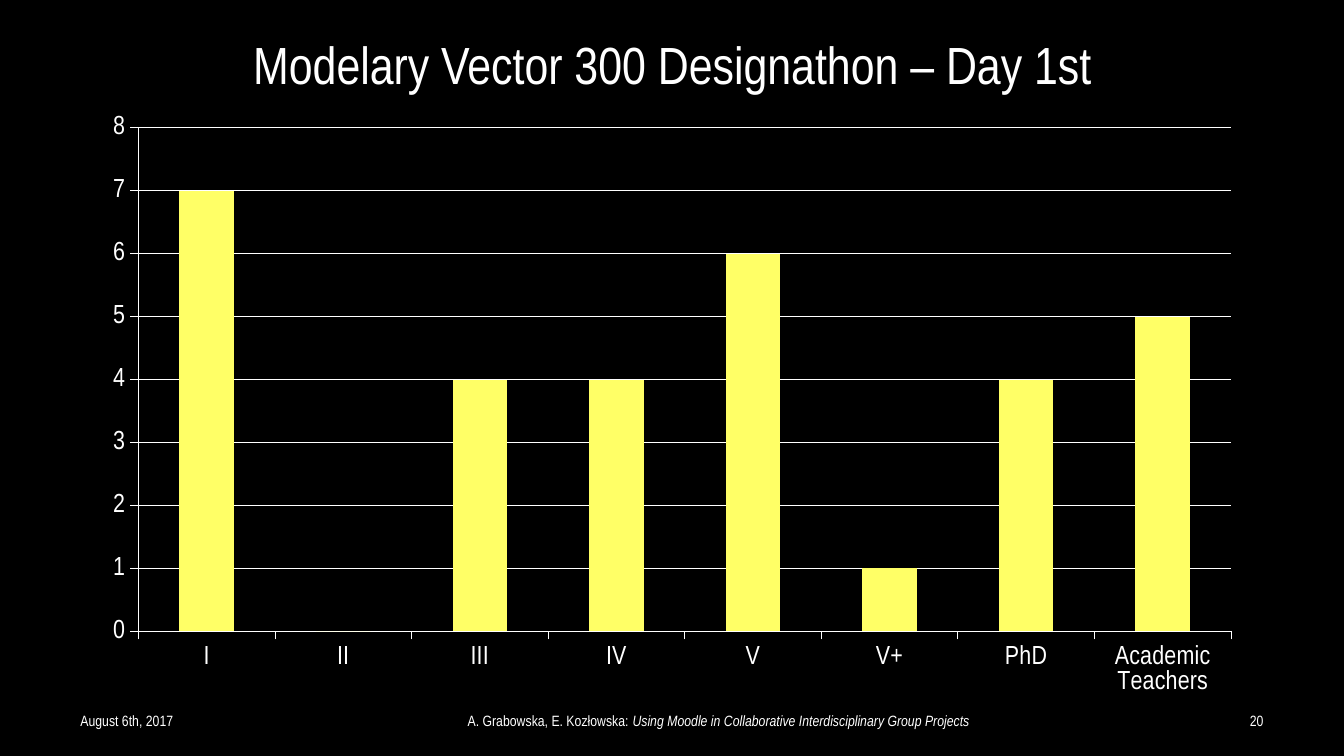
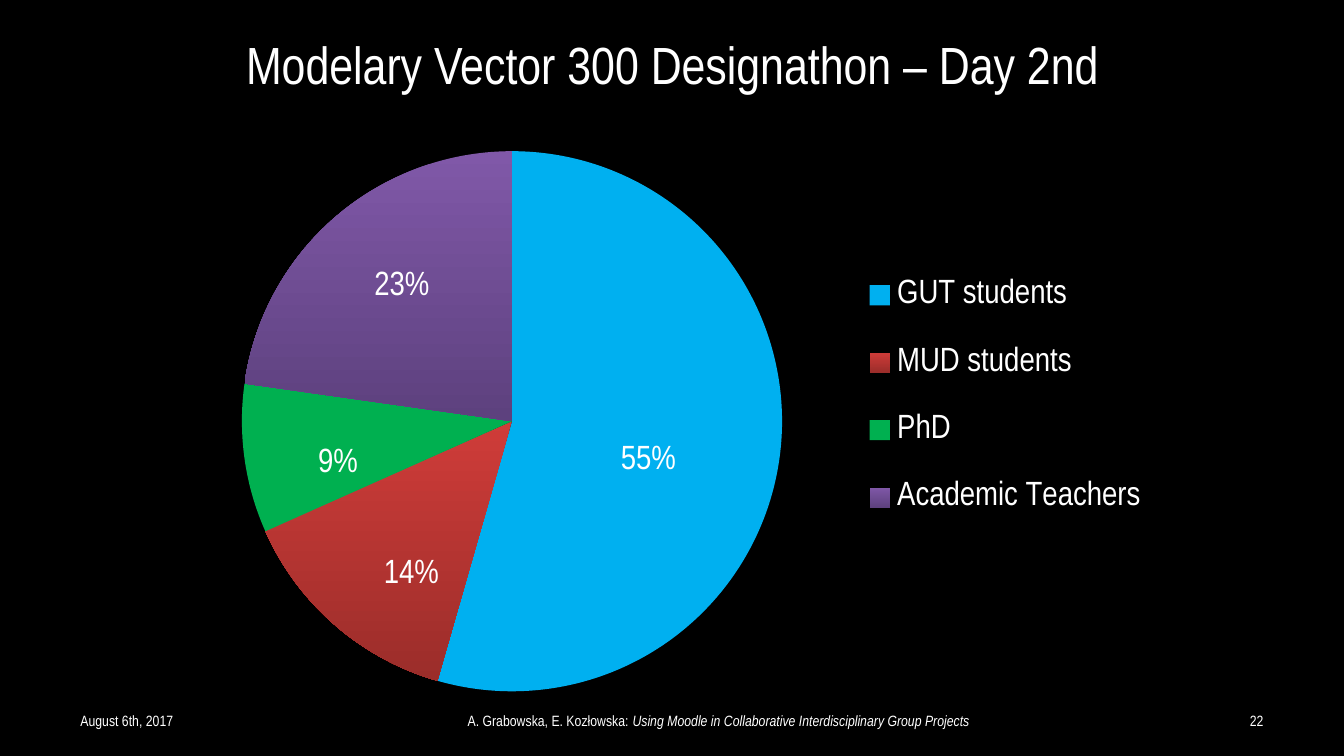
from lxml import etree
from pptx import Presentation
from pptx.chart.data import CategoryChartData
from pptx.dml.color import RGBColor
from pptx.enum.chart import XL_CHART_TYPE as ChartType
from pptx.enum.chart import XL_LABEL_POSITION as LabelPos
from pptx.enum.chart import XL_LEGEND_POSITION as LegendPos
from pptx.enum.chart import XL_TICK_MARK as TickMark
from pptx.enum.text import MSO_ANCHOR as Anchor
from pptx.enum.text import PP_ALIGN as Align
from pptx.oxml import parse_xml
from pptx.oxml.ns import nsdecls, qn
from pptx.util import Inches, Pt

FONT = "Arial Narrow"
COLORS = {
    "background": "000000",
    "text": "FFFFFF",
    "bar": "FFFF66",
    "gut": "00B0F0",
    "mud_top": "CF3C39",
    "mud_bottom": "9B2D2A",
    "phd": "00B050",
    "teachers_top": "8058A8",
    "teachers_bottom": "5D417E",
}
EVENT = "Modelary Vector 300 Designathon"
DATE = "August 6th, 2017"
AUTHORS = "A. Grabowska, E. Kozłowska: "
TALK = "Using Moodle in Collaborative Interdisciplinary Group Projects"
FOOTER_TOP, FOOTER_HEIGHT = 5.21, 0.3
PERCENT = '0"%"'


def rgb(name):
    return RGBColor.from_string(COLORS[name])


def style_font(font, size):
    font.name = FONT
    font.size = Pt(size)
    font.color.rgb = rgb("text")


def add_title(slide, text):
    title = slide.shapes.title
    title.left, title.top = Inches(0), Inches(0)
    title.width, title.height = Inches(10), Inches(0.94)
    title.text_frame.vertical_anchor = Anchor.MIDDLE
    heading = title.text_frame.paragraphs[0]
    heading.text = text
    heading.alignment = Align.CENTER
    style_font(heading.font, 28)


def add_footer(slide, number):
    """Date on the left, talk in the middle, slide number on the right."""
    parts = [
        (0.5, 2.33, Align.LEFT, DATE, ""),
        (1.61, 7.48, Align.CENTER, AUTHORS, TALK),
        (7.17, 2.33, Align.RIGHT, str(number), ""),
    ]
    for left, width, align, plain, italic in parts:
        box = slide.shapes.add_textbox(
            Inches(left), Inches(FOOTER_TOP), Inches(width), Inches(FOOTER_HEIGHT))
        frame = box.text_frame
        frame.word_wrap = True
        frame.vertical_anchor = Anchor.MIDDLE
        line = frame.paragraphs[0]
        line.alignment = align
        style_font(line.font, 8)
        line.add_run().text = plain
        if italic:
            talk = line.add_run()
            talk.text = italic
            talk.font.italic = True


def set_layout(parent, index, chart_box, part_box, modes=()):
    """Place a chart part; part_box is in inches from the chart's corner."""
    for old in parent.findall(qn("c:layout")):
        parent.remove(old)
    layout = parse_xml(f"<c:layout {nsdecls('c')}><c:manualLayout/></c:layout>")
    width, height = chart_box[2:]
    fractions = [part / whole for part, whole in zip(part_box, (width, height) * 2)]
    for tag, value in [*modes, *zip("xywh", fractions)]:
        etree.SubElement(layout[0], qn(f"c:{tag}")).set("val", str(value))
    parent.insert(index, layout)


EDGES = [("xMode", "edge"), ("yMode", "edge")]


def add_chart(slide, kind, box, values, plot_box):
    """Add a one-series chart on a clear ground."""
    data = CategoryChartData()
    data.categories = list(values)
    data.add_series("Series 1", list(values.values()))
    chart = slide.shapes.add_chart(kind, *map(Inches, box), data).chart
    chart.has_title = False
    chart.has_legend = False
    style_font(chart.font, 18)
    space = chart.element
    space.find(qn("c:chart")).addnext(parse_xml(
        f"<c:spPr {nsdecls('c', 'a')}><a:noFill/><a:ln><a:noFill/></a:ln></c:spPr>"))
    set_layout(space.find(".//" + qn("c:plotArea")), 0, box, plot_box,
               [("layoutTarget", "inner"), *EDGES])
    return chart


def add_column_chart(slide, box, values):
    chart = add_chart(slide, ChartType.COLUMN_CLUSTERED, box, values,
                      (0.36, 0.18, 8.13, 3.75))
    plot = chart.plots[0]
    plot.gap_width = 150
    plot.vary_by_categories = False
    bars = plot.series[0].format.fill
    bars.solid()
    bars.fore_color.rgb = rgb("bar")

    # Axes and gridlines
    scale = chart.value_axis
    scale.minimum_scale, scale.maximum_scale, scale.major_unit = 0, 8, 1
    scale.has_major_gridlines = True
    lines = [scale.major_gridlines.format.line]
    for axis in (chart.category_axis, scale):
        axis.major_tick_mark = TickMark.OUTSIDE
        style_font(axis.tick_labels.font, 14)
        lines.append(axis.format.line)
    for line in lines:
        line.color.rgb = rgb("text")
        line.width = Pt(0.5)


def fill_slice(fill, names):
    """One colour is flat, two run from top to bottom."""
    if len(names) == 1:
        fill.solid()
        fill.fore_color.rgb = rgb(names[0])
        return
    fill.gradient()
    fill.gradient_angle = 270
    for stop, name in zip(fill.gradient_stops, names):
        stop.color.rgb = rgb(name)


def add_pie_chart(slide, box, values, slices):
    """Each slice has its colours and the shift of its label in inches."""
    chart = add_chart(slide, ChartType.PIE, box, values,
                      (1.33, 0.18, 4.02, 4.03))
    plot = chart.plots[0]
    plot.vary_by_categories = True
    series = plot.series[0]

    # Shares
    shares = series.data_labels
    shares.show_value = True
    shares.number_format = PERCENT
    shares.number_format_is_linked = False
    shares.position = LabelPos.CENTER
    style_font(shares.font, 18)

    # Slices and their shifted labels
    for index, (names, shift) in enumerate(slices):
        point = series.points[index]
        fill_slice(point.format.fill, names)
        style_font(point.data_label.font, 18)
        point.data_label.position = LabelPos.CENTER
        label = shares._element.findall(qn("c:dLbl"))[index]
        set_layout(label, 1, box, shift)
        number_format = etree.Element(qn("c:numFmt"))
        number_format.set("formatCode", PERCENT)
        number_format.set("sourceLinked", "0")
        label.insert(2, number_format)

    # Legend
    chart.has_legend = True
    chart.legend.position = LegendPos.RIGHT
    chart.legend.include_in_layout = False
    style_font(chart.legend.font, 18)
    set_layout(chart.legend._element, 1, box, (5.56, 0.87, 2.9, 2.28), EDGES)


def add_slide(prs, day, number):
    slide = prs.slides.add_slide(prs.slide_layouts[5])
    add_title(slide, f"{EVENT} – Day {day}")
    add_footer(slide, number)
    return slide


def main():
    prs = Presentation()
    prs.slide_width = Inches(10)
    prs.slide_height = prs.slide_width * 9 // 16
    ground = prs.slide_master.background.fill
    ground.solid()
    ground.fore_color.rgb = rgb("background")

    first_day = add_slide(prs, "1st", 20)
    add_column_chart(first_day, (0.67, 0.77, 8.66, 4.5), {
        "I": 7, "II": 0, "III": 4, "IV": 4, "V": 6, "V+": 1,
        "PhD": 4, "Academic Teachers": 5})

    second_day = add_slide(prs, "2nd", 22)
    add_pie_chart(
        second_day, (0.47, 0.94, 9.06, 4.39),
        {"GUT students": 55, "MUD students": 14, "PhD": 9, "Academic Teachers": 23},
        [(("gut",), (0.02, 0.16)),
         (("mud_top", "mud_bottom"), (-0.09, 0.39)),
         (("phd",), (-0.3, 0.18)),
         (("teachers_top", "teachers_bottom"), (-0.16, -0.24))])

    prs.save("out.pptx")


if __name__ == "__main__":
    main()
